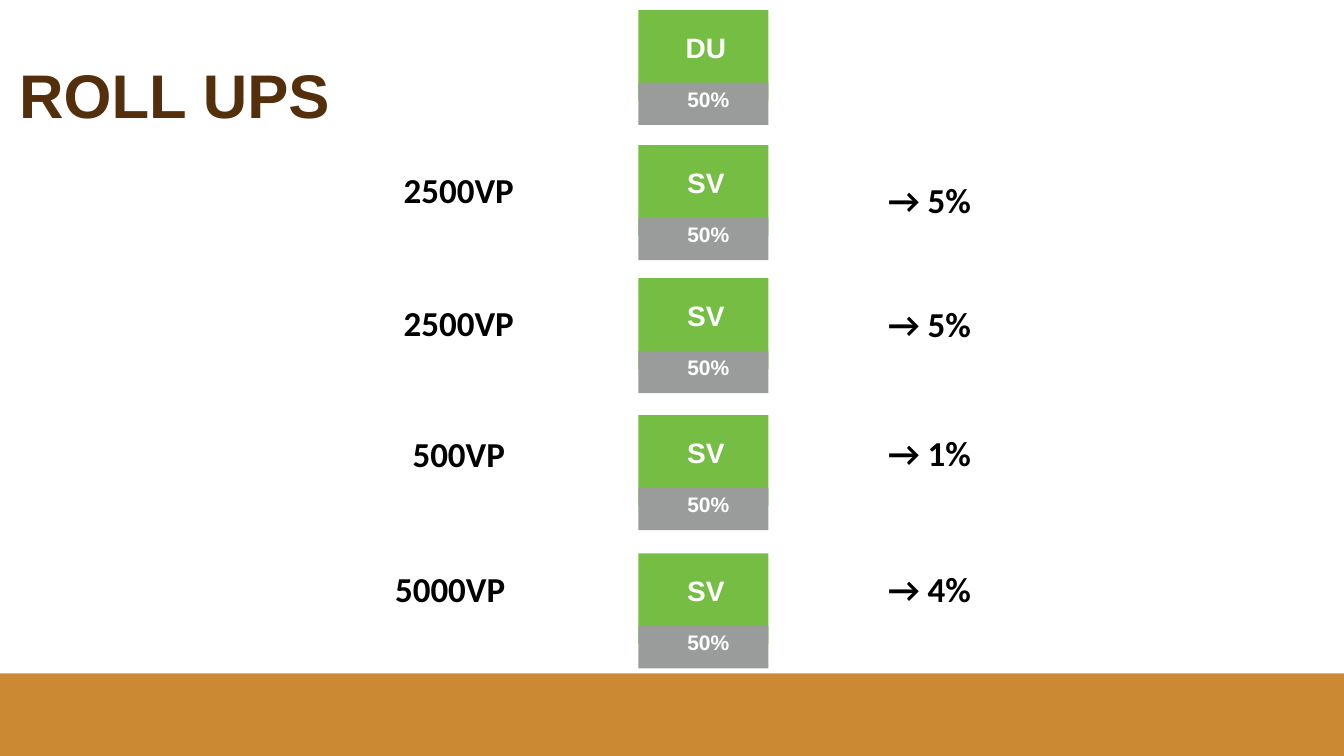
from pptx import Presentation
from pptx.dml.color import RGBColor
from pptx.enum.shapes import MSO_SHAPE
from pptx.enum.text import MSO_ANCHOR, MSO_AUTO_SIZE, PP_ALIGN
from pptx.util import Inches, Pt

WIDE, HIGH = Inches(13.33), Inches(7.5)
RECT = MSO_SHAPE.RECTANGLE
MID, TOP = MSO_ANCHOR.MIDDLE, MSO_ANCHOR.TOP
GROW, FIXED = MSO_AUTO_SIZE.SHAPE_TO_FIT_TEXT, MSO_AUTO_SIZE.NONE
LEFT, CENTER = PP_ALIGN.LEFT, PP_ALIGN.CENTER
GREEN, GREY, OCHRE, BROWN = "75BE43", "9A9C9C", "CA8932", "53300B"

CARDS = [(1.33, "DU"), (19.2, "SV"), (36.8, "SV"), (54.93, "SV"), (73.2, "SV")]
POINTS = [
    (24.46, 21.6, 19.35, "2500VP", CENTER),
    (24.46, 39.2, 19.35, "2500VP", CENTER),
    (24.46, 56.53, 19.35, "500VP", CENTER),
    (28.66, 74.4, 10.88, "5000VP", LEFT),
]
RATES = [(22.93, "→ 5%"), (39.33, "→ 5%"), (56.4, "→ 1%"), (74.4, "→ 4%")]


def color(code):
    """Turn a hex string into a colour."""
    return RGBColor.from_string(code)


def share(x, y, w, h):
    """Turn percentages of the slide into left, top, width and height."""
    return [round(part * size / 100)
            for part, size in zip((x, y, w, h), (WIDE, HIGH, WIDE, HIGH))]


def write(shape, text, size=25, font="Calibri", ink="000000",
          align=LEFT, anchor=TOP, fit=GROW, inset=None):
    """Put one bold formatted line into a shape."""
    frame = shape.text_frame
    frame.word_wrap = True
    frame.auto_size = fit
    frame.vertical_anchor = anchor
    if inset is not None:
        frame.margin_left = frame.margin_right = frame.margin_bottom = 0
        frame.margin_top = Inches(inset)
    line = frame.paragraphs[0]
    line.alignment = align
    run = line.add_run()
    run.text = text
    run.font.name = font
    run.font.size = Pt(size)
    run.font.bold = True
    run.font.color.rgb = color(ink)


def block(slide, area, fill):
    """Draw a plain filled rectangle."""
    shape = slide.shapes.add_shape(RECT, *share(*area))
    shape.shadow.inherit = False
    shape.fill.solid()
    shape.fill.fore_color.rgb = color(fill)
    shape.line.fill.background()


def label(slide, area, text, **style):
    """Add a text box holding one line."""
    write(slide.shapes.add_textbox(*share(*area)), text, **style)


def card(slide, top, name):
    """Draw a green card with its name and a grey band for its share."""
    style = {"font": "Arial", "ink": "FFFFFF", "align": CENTER}
    block(slide, (47.49, top, 9.68, 12), GREEN)
    label(slide, (49.74, top + 2.4, 5.55, 4.67), name,
          size=20, inset=0.02, **style)
    block(slide, (47.49, top + 9.6, 9.68, 5.6), GREY)
    label(slide, (49.21, top + 10, 6.98, 3.6), "50%",
          size=15, inset=0.01, **style)


def head(slide, text):
    """Place and format the title."""
    title = slide.shapes.title
    title.left, title.top, title.width, title.height = share(
        0.68, 3.33, 86.27, 19.33)
    write(title, text, size=44, font="Arial", ink=BROWN,
          anchor=MID, fit=FIXED)
    title.text_frame.paragraphs[0].line_spacing = 0.9


def main():
    """Build and save the slide."""
    deck = Presentation()
    deck.slide_width, deck.slide_height = WIDE, HIGH
    slide = deck.slides.add_slide(deck.slide_layouts[5])
    block(slide, (0, 89.07, 100, 10.93), OCHRE)
    head(slide, "ROLL UPS")
    for top, name in CARDS:
        card(slide, top, name)
    for left, top, width, text, align in POINTS:
        label(slide, (left, top, width, 6.93), text, align=align)
    for top, text in RATES:
        label(slide, (65.34, top, 34.6, 6.93), text)
    deck.save("out.pptx")


if __name__ == "__main__":
    main()
